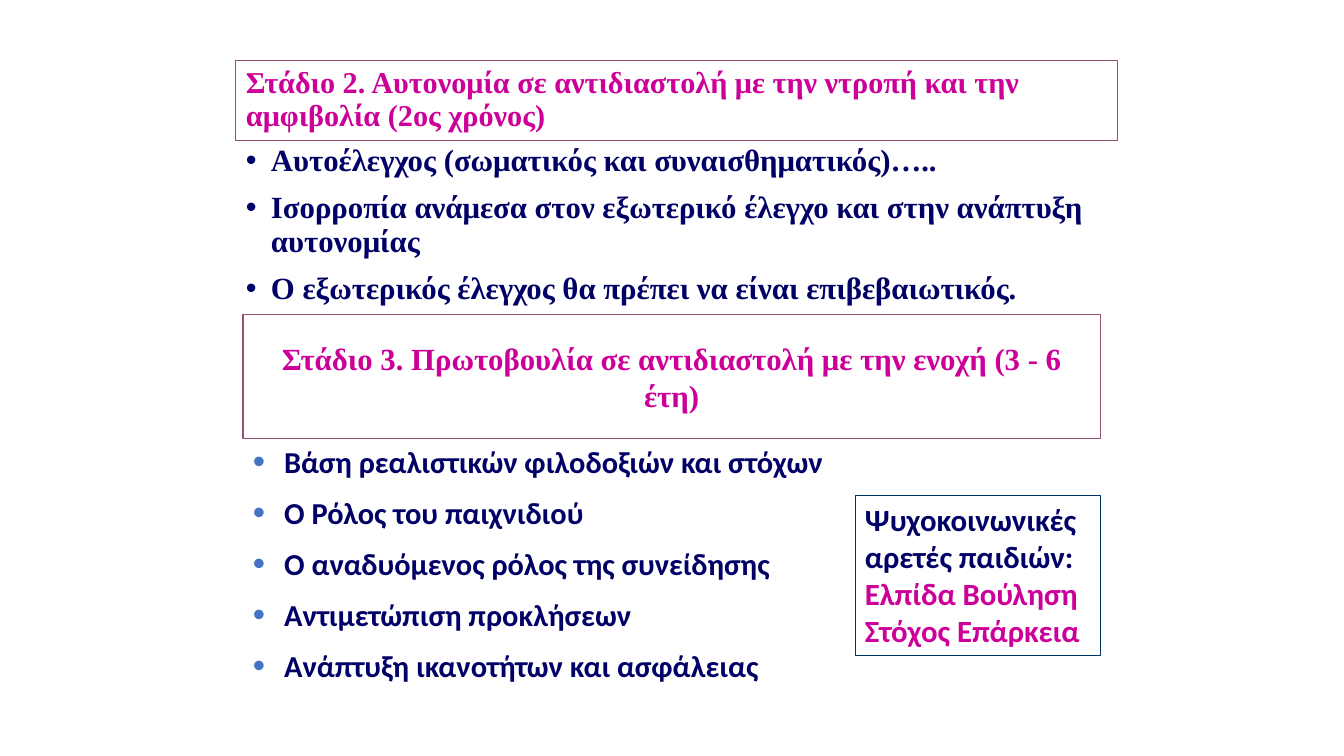
from lxml import etree
from pptx import Presentation
from pptx.dml.color import RGBColor
from pptx.enum.shapes import MSO_SHAPE
from pptx.enum.text import MSO_ANCHOR, MSO_AUTO_SIZE, PP_ALIGN
from pptx.oxml.ns import qn
from pptx.util import Inches, Pt

RECTANGLE = MSO_SHAPE.RECTANGLE
TOP, MIDDLE = MSO_ANCHOR.TOP, MSO_ANCHOR.MIDDLE
LEFT, CENTER = PP_ALIGN.LEFT, PP_ALIGN.CENTER
NO_AUTOFIT = MSO_AUTO_SIZE.NONE
TITLE_ONLY = 5

COLORS = {
    "heading": "CC0099",
    "body": "000066",
    "heading_border": "954F72",
    "virtues_border": "003366",
    "bullet": "4472C4",
    "paper": "FFFFFF",
}
SERIF, SANS = "Times New Roman", "Calibri"


def rgb(name):
    return RGBColor.from_string(COLORS[name])


class StageSlide:
    """Holds the slide; every box is (left, top, width, height) in percent of it."""

    def __init__(self, deck):
        self.deck = deck
        self.slide = deck.slides.add_slide(deck.slide_layouts[TITLE_ONLY])

    def place(self, box):
        sides = (self.deck.slide_width, self.deck.slide_height) * 2
        return [round(side * share / 100) for side, share in zip(sides, box)]

    def set_frame(self, shape, anchor):
        frame = shape.text_frame
        frame.word_wrap = True
        frame.auto_size = NO_AUTOFIT
        frame.vertical_anchor = anchor
        return frame

    def set_font(self, target, face, size, color):
        font = target.font
        font.name, font.size, font.bold = face, Pt(size), True
        font.color.rgb = rgb(color)

    def set_border(self, shape, color):
        shape.line.color.rgb = rgb(color)
        shape.line.width = Pt(0.75)

    def title(self, text, box):
        title = self.slide.shapes.title
        title.left, title.top, title.width, title.height = self.place(box)
        self.set_border(title, "heading_border")
        paragraph = self.set_frame(title, MIDDLE).paragraphs[0]
        paragraph.text = text
        paragraph.alignment = LEFT
        paragraph.line_spacing = 0.9
        self.set_font(paragraph, SERIF, 21.6, "heading")

    def panel(self, box, border, anchor, fill=None):
        """Add a bordered rectangle and return its text frame."""
        panel = self.slide.shapes.add_shape(RECTANGLE, *self.place(box))
        panel.shadow.inherit = False
        if fill:
            panel.fill.solid()
            panel.fill.fore_color.rgb = rgb(fill)
        else:
            panel.fill.background()
        self.set_border(panel, border)
        return self.set_frame(panel, anchor)

    def heading(self, text, box):
        paragraph = self.panel(box, "heading_border", MIDDLE).paragraphs[0]
        paragraph.text = text
        paragraph.alignment = CENTER
        self.set_font(paragraph, SERIF, 22, "heading")

    def virtues(self, parts, box):
        """Add the filled side box; parts are (text, colour) pairs."""
        paragraph = self.panel(box, "virtues_border", TOP, "paper").paragraphs[0]
        paragraph.alignment = LEFT
        for text, color in parts:
            run = paragraph.add_run()
            run.text = text
            self.set_font(run, SANS, 22, color)

    def bullets(self, items, box, face, size, indent, before, after=0,
                line_spacing=1.0, bullet_color="body", bullet_percent=100):
        textbox = self.slide.shapes.add_textbox(*self.place(box))
        frame = self.set_frame(textbox, TOP)
        for index, item in enumerate(items):
            paragraph = frame.add_paragraph() if index else frame.paragraphs[0]
            paragraph.text = item
            paragraph.line_spacing = line_spacing
            paragraph.space_before, paragraph.space_after = Pt(before), Pt(after)
            self.mark(paragraph, indent, bullet_color, bullet_percent)
            self.set_font(paragraph, face, size, "body")

    def mark(self, paragraph, indent, color, percent):
        """Give the paragraph a hanging bullet."""
        properties = paragraph._p.get_or_add_pPr()
        properties.set("marL", str(Inches(indent)))
        properties.set("indent", str(-Inches(indent)))
        tint = etree.SubElement(properties, qn("a:buClr"))
        etree.SubElement(tint, qn("a:srgbClr"), val=COLORS[color])
        etree.SubElement(properties, qn("a:buSzPct"), val=str(percent * 1000))
        etree.SubElement(properties, qn("a:buFont"), typeface="Arial")
        etree.SubElement(properties, qn("a:buChar"), char="•")


def main():
    deck = Presentation()
    deck.slide_width, deck.slide_height = Inches(13.33), Inches(7.5)
    stages = StageSlide(deck)

    stages.title(
        "Στάδιο 2. Αυτονομία σε αντιδιαστολή με την ντροπή και την αμφιβολία (2ος χρόνος)",
        (17.55, 8, 65.57, 10.53))
    stages.bullets(
        ["Αυτοέλεγχος (σωματικός και συναισθηματικός)…..",
         "Ισορροπία ανάμεσα στον εξωτερικό έλεγχο και στην ανάπτυξη αυτονομίας",
         "Ο εξωτερικός έλεγχος θα πρέπει να είναι επιβεβαιωτικός."],
        (17.55, 18.53, 64.37, 24.13), SERIF, 22, indent=0.25, before=10,
        line_spacing=0.9)
    stages.heading(
        "Στάδιο 3. Πρωτοβουλία σε αντιδιαστολή με την ενοχή (3 - 6 έτη)",
        (18.08, 41.6, 63.77, 16.4))
    stages.bullets(
        ["Βάση ρεαλιστικών φιλοδοξιών και στόχων",
         "Ο Ρόλος του παιχνιδιού",
         "Ο αναδυόμενος ρόλος της συνείδησης",
         "Αντιμετώπιση προκλήσεων",
         "Ανάπτυξη ικανοτήτων και ασφάλειας"],
        (18.08, 58, 46.66, 34), SANS, 21.7, indent=0.31, before=4.3, after=6,
        bullet_color="bullet", bullet_percent=115)
    stages.virtues(
        [("Ψυχοκοινωνικές αρετές παιδιών: ", "body"),
         ("Ελπίδα Βούληση Στόχος Επάρκεια", "heading")],
        (63.62, 65.6, 18.3, 21.07))

    deck.save("out.pptx")


if __name__ == "__main__":
    main()
